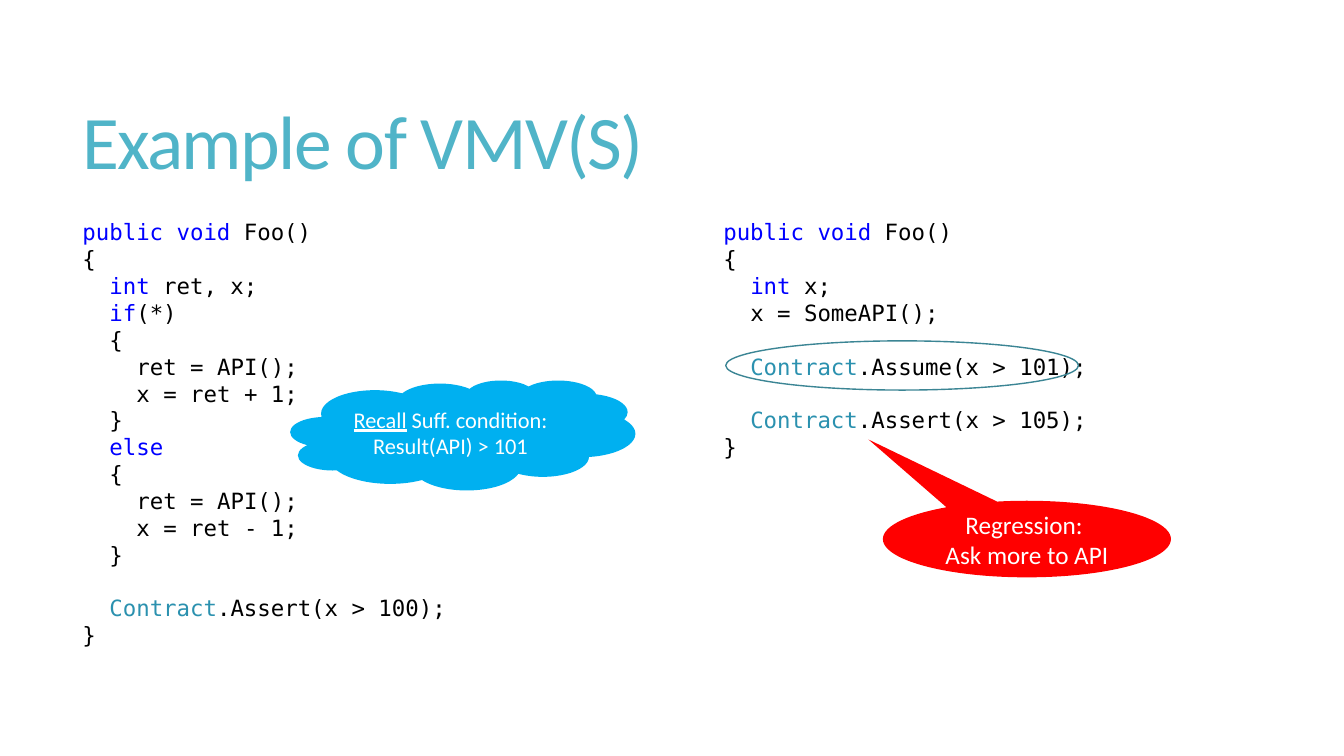
import dataclasses

import pptx
import pptx.util
import pptx.dml.color
import pptx.enum.shapes
import pptx.enum.text

Cm = pptx.util.Cm
Pt = pptx.util.Pt
SHAPE = pptx.enum.shapes.MSO_SHAPE
ALIGN = pptx.enum.text.PP_ALIGN
ANCHOR = pptx.enum.text.MSO_ANCHOR
AUTO_SIZE = pptx.enum.text.MSO_AUTO_SIZE


@dataclasses.dataclass(frozen=True)
class Theme:
    """Fonts, type sizes and colours of the slide."""
    body: str = "Calibri"
    mono: str = "DejaVu Sans Mono"
    title_size: float = 54
    code_size: float = 16
    code_line: float = 19.2
    cloud_size: float = 16
    callout_size: float = 18
    title: str = "50B4C8"
    text: str = "000000"
    keyword: str = "0000FF"
    type_name: str = "2B91AF"
    ring: str = "3B8594"
    cloud: str = "00B0F0"
    callout: str = "FF0000"
    light: str = "FFFFFF"


THEME = Theme()
INDENT = Cm(0.34)

API_CODE = """`public` `void` Foo()
{
  `int` ret, x;
  `if`(*)
  {
    ret = API();
    x = ret + 1;
  }
  `else`
  {
    ret = API();
    x = ret - 1;
  }

  `Contract`.Assert(x > 100);
}"""

SOME_API_CODE = """`public` `void` Foo()
{
  `int` x;
  x = SomeAPI();

  `Contract`.Assume(x > 101);

  `Contract`.Assert(x > 105);
}"""


def rgb(value):
    """Turn a hex string into a colour."""
    return pptx.dml.color.RGBColor.from_string(value)


def set_all(obj, formats):
    """Set every attribute in a dict of format values."""
    for name, value in formats.items():
        setattr(obj, name, value)


def add_run(p, text, color, **formats):
    """Append a run with its font formats."""
    r = p.add_run()
    r.text = text
    set_all(r.font, formats)
    r.font.color.rgb = rgb(color)
    return r


def paragraphs(tf, count):
    """Yield the first paragraph of a frame, then new ones."""
    for i in range(count):
        yield tf.add_paragraph() if i else tf.paragraphs[0]


def add_title(s, box, text):
    """Place the slide title in its box."""
    tf = s.shapes.add_textbox(*map(Cm, box)).text_frame
    set_all(tf, {"word_wrap": True, "vertical_anchor": ANCHOR.MIDDLE})
    p = tf.paragraphs[0]
    p.line_spacing = 0.85
    r = add_run(p, text, THEME.title, name=THEME.body, size=Pt(THEME.title_size))
    r.font._element.set("spc", "-120")


def add_code(s, box, code):
    """Place a listing; backticks mark coloured words, empty lines become spacing."""
    tf = s.shapes.add_textbox(*map(Cm, box)).text_frame
    set_all(tf, {"word_wrap": True, "auto_size": AUTO_SIZE.SHAPE_TO_FIT_TEXT})
    lines = code.split("\n")
    shown = [(line, i > 0 and not lines[i - 1]) for i, line in enumerate(lines) if line]
    for p, (line, gap) in zip(paragraphs(tf, len(shown)), shown):
        text = line.lstrip(" ")
        pPr = p._p.get_or_add_pPr()
        pPr.set("marL", str(INDENT * (len(line) - len(text))))
        pPr.set("indent", "0")
        if gap:
            p.space_before = Pt(THEME.code_line)
        for i, part in enumerate(text.split("`")):
            marked = THEME.type_name if part == "Contract" else THEME.keyword
            if part:
                add_run(p, part, marked if i % 2 else THEME.text,
                        name=THEME.mono, size=Pt(THEME.code_size))


def add_ring(s, box):
    """Outline a part of the listing with an ellipse."""
    sp = s.shapes.add_shape(SHAPE.OVAL, *map(Cm, box))
    sp.shadow.inherit = False
    sp.fill.background()
    sp.line.color.rgb = rgb(THEME.ring)
    sp.line.width = Pt(1)


def add_bubble(s, box, kind, fill, size, lines, adjustments=()):
    """Place a filled bubble; each line is a list of (text, underlined) parts."""
    sp = s.shapes.add_shape(kind, *map(Cm, box))
    sp.shadow.inherit = False
    sp.fill.solid()
    sp.fill.fore_color.rgb = rgb(fill)
    sp.line.fill.background()
    for i, value in enumerate(adjustments):
        sp.adjustments[i] = value
    tf = sp.text_frame
    set_all(tf, {"word_wrap": True, "vertical_anchor": ANCHOR.MIDDLE})
    for p, parts in zip(paragraphs(tf, len(lines)), lines):
        p.alignment = ALIGN.CENTER
        for text, underline in parts:
            add_run(p, text, THEME.light, name=THEME.body, size=Pt(size), underline=underline)


def build_slide(prs):
    """Compose the two listings and their annotations."""
    s = prs.slides.add_slide(prs.slide_layouts[6])
    add_title(s, (1.83, 1.4, 29.92, 4.6), "Example of VMV(S)")
    add_code(s, (1.83, 5.38, 10.21, 11.2), API_CODE)
    add_code(s, (17.98, 5.38, 9.68, 6.4), SOME_API_CODE)
    add_ring(s, (18.29, 8.59, 8.89, 1.24))
    add_bubble(s, (22.25, 12.62, 7.26, 1.93), SHAPE.OVAL_CALLOUT, THEME.callout,
               THEME.callout_size,
               [[("Regression: ", False)], [("Ask more to API", False)]], (-0.55, -1.3))
    add_bubble(s, (7.32, 9.58, 8.69, 2.77), SHAPE.CLOUD, THEME.cloud, THEME.cloud_size,
               [[("Recall", True), (" Suff. condition:", False)],
                [("Result(API) > 101", False)]])


def main():
    """Build and save the presentation."""
    prs = pptx.Presentation()
    set_all(prs, {"slide_width": Cm(33.87), "slide_height": Cm(19.05)})
    build_slide(prs)
    prs.save("out.pptx")


if __name__ == "__main__":
    main()
